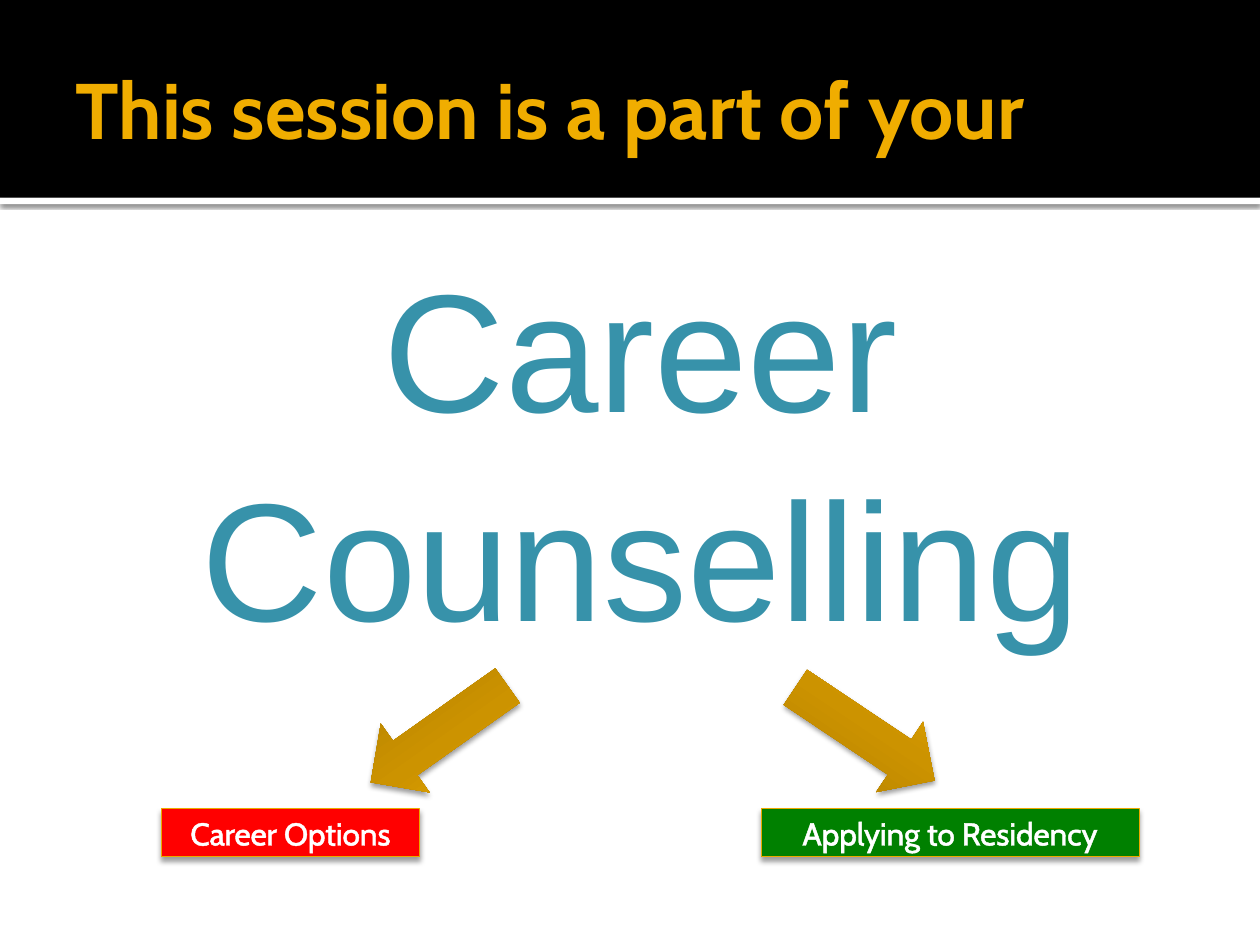
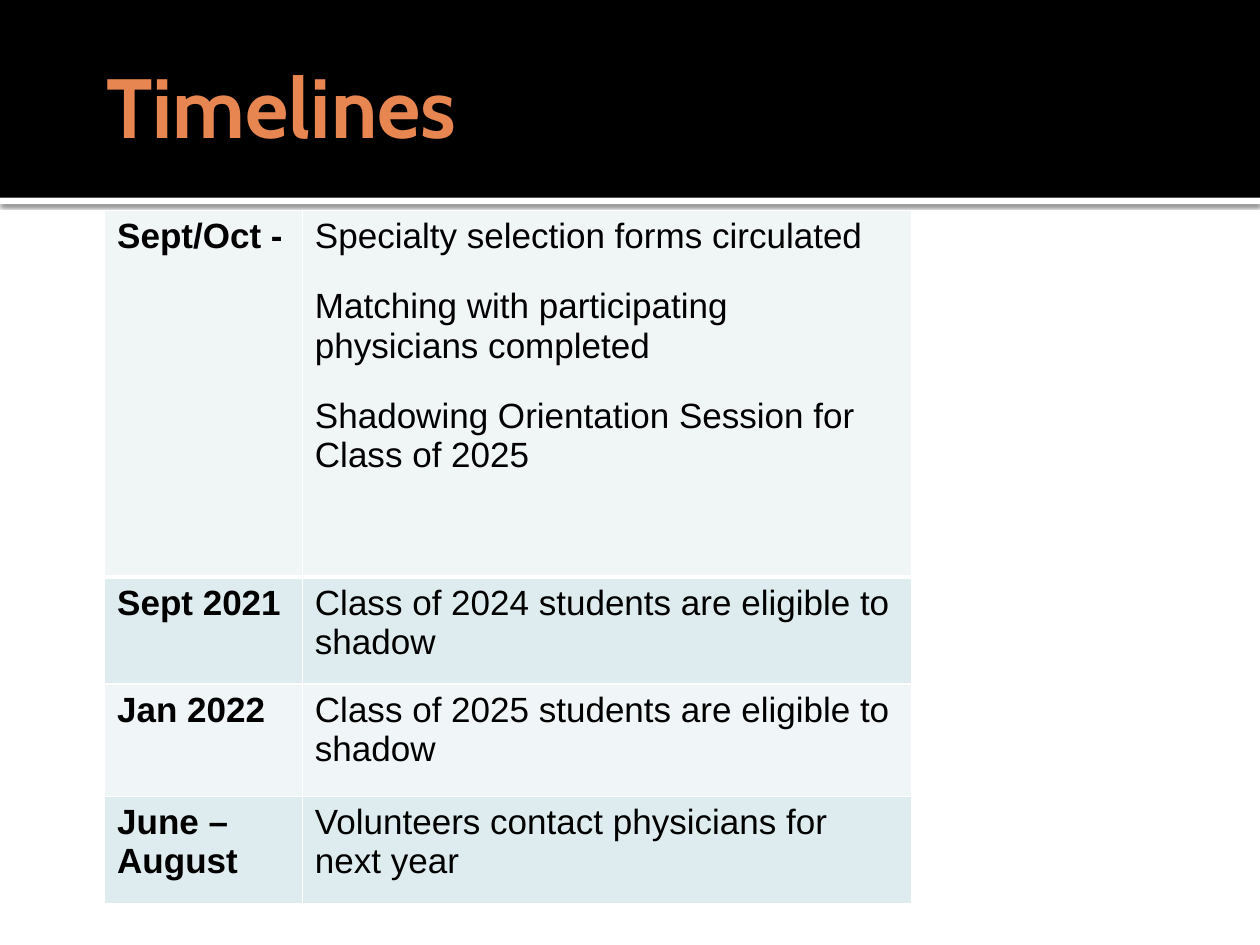
"""Build two slides on career counselling and its timelines."""
import pptx
import pptx.dml.color
import pptx.enum.shapes
import pptx.enum.text
import pptx.oxml
import pptx.oxml.ns
import pptx.util

WIDE, HIGH = pptx.util.Inches(10), pptx.util.Inches(7.5)
COLS, ROWS = 100, 75
BLACK, WHITE, GOLD, EDGE = "000000", "FFFFFF", "F0AD00", "EBA900"
ORANGE, TEAL, RED, GREEN = "E88651", "3792AA", "FF0000", "008000"
PALE, MIST, TINT = "F0F5F6", "F0F6F7", "DFECEF"
RAMP = [(0, "AE7D00"), (55, "CC9300"), (100, "EEAB00")]
HEAD, BODY = "Cabin", "Arial"
SHAPE = pptx.enum.shapes.MSO_SHAPE
ALIGN = pptx.enum.text.PP_ALIGN
ANCHOR = pptx.enum.text.MSO_ANCHOR
SOFT = {"alpha": 38, "blur": 3.1, "dist": 2}
CRISP = {"alpha": 60, "blur": 2.5, "dist": 0.8}


def paint(text):
    """Turn a hex string into a colour."""
    return pptx.dml.color.RGBColor.from_string(text)


def across(cols):
    """Measure grid columns."""
    return round(WIDE * cols / COLS)


def down(rows):
    """Measure grid rows."""
    return round(HIGH * rows / ROWS)


def place(left, top, width, height):
    """Turn a grid area into slide lengths."""
    return across(left), down(top), across(width), down(height)


def node(tag, inner="", **attrs):
    """Make a drawing element with its inner markup."""
    pairs = " ".join(f'{key}="{val}"' for key, val in attrs.items())
    space = pptx.oxml.ns.nsdecls("a")
    return pptx.oxml.parse_xml(f"<a:{tag} {space} {pairs}>{inner}</a:{tag}>")


def solid(color):
    """Write the markup of a plain fill."""
    return f'<a:solidFill><a:srgbClr val="{color}"/></a:solidFill>'


def write(frame, lines, size=20, font=BODY, color=BLACK, bold=False,
          align=ALIGN.LEFT, gap=0, stroke=0):
    """Fill a text frame with formatted paragraphs."""
    frame.word_wrap = True
    for pos, line in enumerate(lines):
        para = frame.paragraphs[0] if pos == 0 else frame.add_paragraph()
        para.alignment = align
        para.space_before = pptx.util.Pt(gap if pos else 0)
        run = para.add_run()
        run.text = line
        run.font.size, run.font.name = pptx.util.Pt(size), font
        run.font.bold = bold
        run.font.color.rgb = paint(color)
        if stroke:
            rim = node("ln", solid(color), w=pptx.util.Pt(stroke))
            run.font._element.insert(0, rim)


def shade(shape, alpha, blur, dist):
    """Drop a black shadow straight down."""
    shape.shadow.inherit = False
    blur, dist = pptx.util.Pt(blur), pptx.util.Pt(dist)
    inner = (f'<a:outerShdw blurRad="{blur}" dist="{dist}" dir="5400000" '
             f'rotWithShape="0"><a:srgbClr val="{BLACK}">'
             f'<a:alpha val="{alpha * 1000}"/></a:srgbClr></a:outerShdw>')
    effect = shape._element.spPr.find(pptx.oxml.ns.qn("a:effectLst"))
    effect.append(pptx.oxml.parse_xml(inner.replace(
        "<a:outerShdw", f"<a:outerShdw {pptx.oxml.ns.nsdecls('a')}", 1)))


def block(slide, area, fill, line=None, cast=None):
    """Add a plain rectangle."""
    shape = slide.shapes.add_shape(SHAPE.RECTANGLE, *place(*area))
    shape.shadow.inherit = False
    shape.fill.solid()
    shape.fill.fore_color.rgb = paint(fill)
    if line:
        shape.line.color.rgb = paint(line)
        shape.line.width = pptx.util.Pt(0.5)
    else:
        shape.line.fill.background()
    if cast:
        shade(shape, **cast)
    return shape


def label(slide, area, text, fill):
    """Add a filled box with an outlined caption."""
    shape = block(slide, area, fill, EDGE, SOFT)
    shape.text_frame.vertical_anchor = ANCHOR.MIDDLE
    write(shape.text_frame, [text], size=18, font=HEAD, color=WHITE,
          align=ALIGN.CENTER, stroke=1.45)


def arrow(slide, left, turn):
    """Add a turned block arrow with a gold ramp."""
    shape = slide.shapes.add_shape(
        SHAPE.RIGHT_ARROW, *place(left, 54.9, 13.3, 6.7))
    shape.rotation = turn
    shape.line.fill.background()
    stops = "".join(f'<a:gs pos="{pos * 1000}"><a:srgbClr val="{color}"/></a:gs>'
                    for pos, color in RAMP)
    ramp = node("gradFill", f'<a:gsLst>{stops}</a:gsLst>'
                '<a:lin ang="16200000" scaled="0"/>', rotWithShape=1)
    shape._element.spPr.find(pptx.oxml.ns.qn("a:prstGeom")).addnext(ramp)
    shade(shape, **SOFT)


def title(slide, area, text, **form):
    """Add the heading over the band."""
    frame = slide.shapes.add_textbox(*place(*area)).text_frame
    frame.vertical_anchor = ANCHOR.MIDDLE
    frame.margin_right = across(0.5)
    write(frame, [text], font=HEAD, bold=True, **form)


def start(deck):
    """Add a blank slide with the shared band."""
    slide = deck.slides.add_slide(deck.slide_layouts[6])
    block(slide, (0, 15.7, 100, 0.5), WHITE, cast=CRISP)
    block(slide, (0, 0, 100, 15.7), BLACK)
    return slide


def border(cell, **widths):
    """Draw white cell borders, one point unless a side differs."""
    props = cell._tc.get_or_add_tcPr()
    for pos, side in enumerate("LRTB"):
        width = pptx.util.Pt(widths.get(side, 1))
        props.insert(pos, node(f"ln{side}", solid(WHITE), w=width))


def grid(slide, left, top, cols, plan):
    """Add the table of dates and events."""
    heights = [height for height, *_ in plan]
    area = place(left, top, sum(cols), sum(heights))
    table = slide.shapes.add_table(len(plan), len(cols), *area).table
    for column, width in zip(table.columns, cols):
        column.width = across(width)
    for pos, (height, fill, date, events) in enumerate(plan):
        table.rows[pos].height = down(height)
        sides = [{"B": 3}, {"T": 3}][pos] if pos < 2 else {}
        for cell, lines in zip(table.rows[pos].cells, ([date], events)):
            cell.fill.solid()
            cell.fill.fore_color.rgb = paint(fill)
            border(cell, **sides)
            write(cell.text_frame, lines, bold=lines == [date], gap=18)


def career(deck):
    """Build the slide on the two parts of counselling."""
    slide = start(deck)
    title(slide, (5, 1.7, 90, 13.7), "This session is a part of your",
          size=45, color=GOLD)
    frame = slide.shapes.add_textbox(*place(9.2, 17.6, 83.3, 33.3)).text_frame
    frame.margin_top, frame.margin_bottom = down(1.8), 0
    write(frame, ["Career", "Counselling"], size=96, color=TEAL,
          align=ALIGN.CENTER, gap=4.5)
    label(slide, (12.8, 64.2, 20.5, 3.8), "Career Options", RED)
    label(slide, (60.4, 64.2, 30, 3.8), "Applying to Residency", GREEN)
    arrow(slide, 62, 33.8)
    arrow(slide, 28.2, 144.7)


def dates(deck):
    """Build the slide with the timeline table."""
    slide = start(deck)
    title(slide, (7.5, 5.8, 39.2, 5), "Timelines", size=48, color=ORANGE)
    grid(slide, 8.3, 16.7, (15.7, 48.4), [
        (29.1, PALE, "Sept/Oct -", [
            "Specialty selection forms circulated",
            "Matching with participating physicians completed",
            "Shadowing Orientation Session for Class of 2025"]),
        (8.5, TINT, "Sept 2021",
         ["Class of 2024 students are eligible to shadow"]),
        (8.9, MIST, "Jan 2022",
         ["Class of 2025 students are eligible to shadow"]),
        (8.5, TINT, "June – August",
         ["Volunteers contact physicians for next year"])])


def main():
    """Build and save the deck."""
    deck = pptx.Presentation()
    deck.slide_width, deck.slide_height = WIDE, HIGH
    career(deck)
    dates(deck)
    deck.save("out.pptx")


if __name__ == "__main__":
    main()
